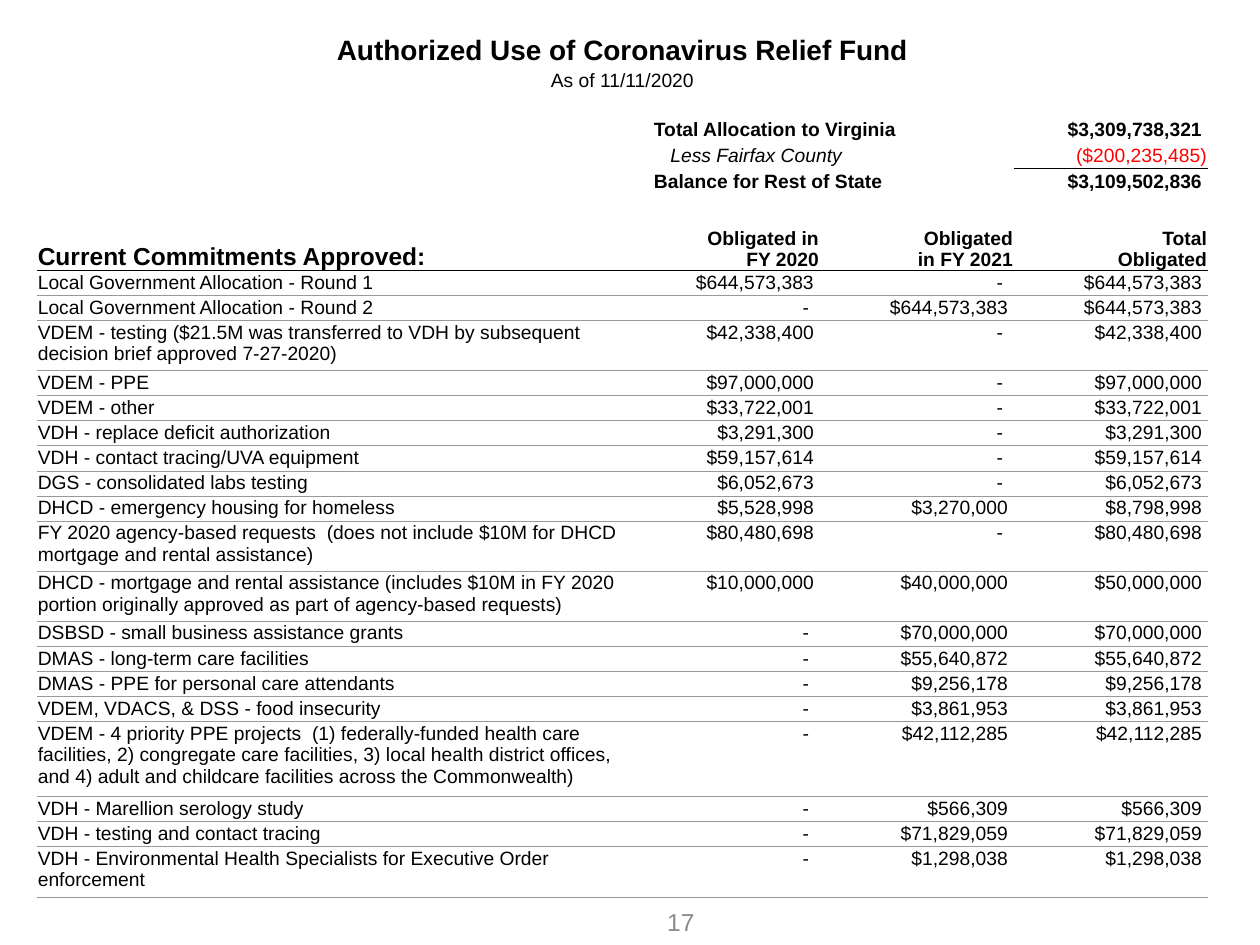
from lxml.etree import SubElement
from pptx import Presentation
from pptx.dml.color import RGBColor
from pptx.enum.text import MSO_ANCHOR as ANCHOR, PP_ALIGN as ALIGN
from pptx.oxml.ns import qn
from pptx.util import Inches, Pt

FONT, BLACK, RED, GREY, RULE = "Arial", "000000", "FF0000", "8C8C8C", "999999"
NO_STYLE = "{2D5ABB26-0587-4C30-8999-92F81FD0307C}"
PAD = 0.01
AMOUNT_GAP, DASH_GAP = 0.05, 0.09  # room kept for a closing bracket

COLUMNS = [4.68, 1.54, 1.54, 1.54]
TOP_ROWS = [0.27, 0.2, 0.2, 0.2, 0.21, 0.2, 0.2, 0.41]
ALLOCATION_ROW, HEADER_ROW = 3, 7
COMMITMENTS_HEIGHT = 4.98

HEADERS = ["Obligated in\nFY 2020", "Obligated\nin FY 2021", "Total\nObligated"]

# label, amount, left indent, right margin, colour, bold, italic
ALLOCATION = [
    ("Total Allocation to Virginia", "$3,309,738,321", 0.22, AMOUNT_GAP, BLACK, True, False),
    ("Less Fairfax County", "($200,235,485)", 0.35, PAD, RED, False, True),
    ("Balance for Rest of State", "$3,109,502,836", 0.22, AMOUNT_GAP, BLACK, True, False),
]

# commitment, FY 2020, FY 2021, lines of text
COMMITMENTS = [
    ("Local Government Allocation - Round 1", 644573383, 0, 1),
    ("Local Government Allocation - Round 2", 0, 644573383, 1),
    ("VDEM - testing ($21.5M was transferred to VDH by subsequent "
     "decision brief approved 7-27-2020)", 42338400, 0, 2),
    ("VDEM - PPE", 97000000, 0, 1),
    ("VDEM - other", 33722001, 0, 1),
    ("VDH - replace deficit authorization", 3291300, 0, 1),
    ("VDH - contact tracing/UVA equipment", 59157614, 0, 1),
    ("DGS - consolidated labs testing", 6052673, 0, 1),
    ("DHCD - emergency housing for homeless", 5528998, 3270000, 1),
    ("FY 2020 agency-based requests  (does not include $10M for DHCD "
     "mortgage and rental assistance)", 80480698, 0, 2),
    ("DHCD - mortgage and rental assistance (includes $10M in FY 2020 "
     "portion originally approved as part of agency-based requests)", 10000000, 40000000, 2),
    ("DSBSD - small business assistance grants", 0, 70000000, 1),
    ("DMAS - long-term care facilities", 0, 55640872, 1),
    ("DMAS - PPE for personal care attendants", 0, 9256178, 1),
    ("VDEM, VDACS, & DSS - food insecurity", 0, 3861953, 1),
    ("VDEM - 4 priority PPE projects  (1) federally-funded health care "
     "facilities, 2) congregate care facilities, 3) local health district offices, "
     "and 4) adult and childcare facilities across the Commonwealth)", 0, 42112285, 3),
    ("VDH - Marellion serology study", 0, 566309, 1),
    ("VDH - testing and contact tracing", 0, 71829059, 1),
    ("VDH - Environmental Health Specialists for Executive Order enforcement",
     0, 1298038, 2),
]


def rgb(color):
    return RGBColor.from_string(color)


def style(p, size, color=BLACK, bold=False, italic=False, align=ALIGN.LEFT):
    p.alignment = align
    font = p.font
    font.name, font.size, font.bold, font.italic = FONT, Pt(size), bold, italic
    font.color.rgb = rgb(color)


def write(cell, text, size=11, anchor=ANCHOR.TOP, left=PAD, right=PAD, **look):
    cell.text = text
    cell.vertical_anchor = anchor
    cell.margin_left, cell.margin_right = Inches(left), Inches(right)
    cell.margin_top, cell.margin_bottom = Inches(PAD), 0
    for p in cell.text_frame.paragraphs:
        style(p, size, **look)


def write_amount(cell, value):
    text, gap = (f"${value:,}", AMOUNT_GAP) if value else ("-", DASH_GAP)
    write(cell, text, right=gap, align=ALIGN.RIGHT)


def add_border(cell, side, color, width):
    """Draw one edge of a cell; side is T or B."""
    ln = SubElement(cell._tc.get_or_add_tcPr(), qn(f"a:ln{side}"), w=str(Pt(width)))
    fill = SubElement(ln, qn("a:solidFill"))
    SubElement(fill, qn("a:srgbClr"), val=color)


def add_rule(table, row, columns, color, width):
    """Draw a line under a row, shared with the row below it."""
    for col in columns:
        add_border(table.cell(row, col), "B", color, width)


def fill_heading(table):
    lines = [("Authorized Use of Coronavirus Relief Fund", 16, True),
             ("As of 11/11/2020", 11, False)]
    for row, (text, size, bold) in enumerate(lines):
        cell = table.cell(row, 0)
        cell.merge(table.cell(row, 3))
        write(cell, text, size, ANCHOR.BOTTOM, bold=bold, align=ALIGN.CENTER)


def fill_allocation(table):
    for row, (label, amount, indent, gap, color, bold, italic) in enumerate(
            ALLOCATION, ALLOCATION_ROW):
        cell = table.cell(row, 1)
        cell.merge(table.cell(row, 2))
        write(cell, label, anchor=ANCHOR.MIDDLE, left=indent, bold=bold, italic=italic)
        write(table.cell(row, 3), amount, anchor=ANCHOR.MIDDLE, right=gap,
              color=color, bold=bold, align=ALIGN.RIGHT)
    add_rule(table, ALLOCATION_ROW + 1, [3], BLACK, 1)


def fill_commitments(table):
    write(table.cell(HEADER_ROW, 0), "Current Commitments Approved:", 14,
          ANCHOR.BOTTOM, bold=True)
    for col, text in enumerate(HEADERS, 1):
        write(table.cell(HEADER_ROW, col), text, anchor=ANCHOR.BOTTOM,
              bold=True, align=ALIGN.RIGHT)
    add_rule(table, HEADER_ROW, range(4), BLACK, 1)
    for row, (label, fy2020, fy2021, _) in enumerate(COMMITMENTS, HEADER_ROW + 1):
        write(table.cell(row, 0), label)
        for col, value in enumerate([fy2020, fy2021, fy2020 + fy2021], 1):
            write_amount(table.cell(row, col), value)
        add_rule(table, row, range(4), RULE, 0.5)


def add_fund_table(slide, left, top):
    line = COMMITMENTS_HEIGHT / sum(item[-1] for item in COMMITMENTS)
    heights = TOP_ROWS + [item[-1] * line for item in COMMITMENTS]
    table = slide.shapes.add_table(
        len(heights), len(COLUMNS), Inches(left), Inches(top),
        Inches(sum(COLUMNS)), Inches(sum(heights))).table
    table.first_row = table.horz_banding = False
    table._tbl.tblPr.find(qn("a:tableStyleId")).text = NO_STYLE
    for column, width in zip(table.columns, COLUMNS):
        column.width = Inches(width)
    for row, height in zip(table.rows, heights):
        row.height = Inches(height)
    for cell in table.iter_cells():
        write(cell, "")
    fill_heading(table)
    fill_allocation(table)
    fill_commitments(table)
    for cell in table.iter_cells():
        cell.fill.background()


def add_page_number(slide, left, top, width, height):
    box = slide.shapes.add_textbox(Inches(left), Inches(top), Inches(width), Inches(height))
    tf = box.text_frame
    tf.word_wrap = True
    tf.vertical_anchor = ANCHOR.MIDDLE
    tf.margin_top = tf.margin_bottom = 0
    p = tf.paragraphs[0]
    p.text = "17"
    style(p, 14, GREY, align=ALIGN.RIGHT)


def main():
    prs = Presentation()
    prs.slide_width, prs.slide_height = Inches(10), Inches(7.5)
    slide = prs.slides.add_slide(prs.slide_layouts[6])
    add_page_number(slide, 5.17, 7.21, 0.44, 0.21)
    add_fund_table(slide, 0.29, 0.25)
    prs.save("out.pptx")


if __name__ == "__main__":
    main()
